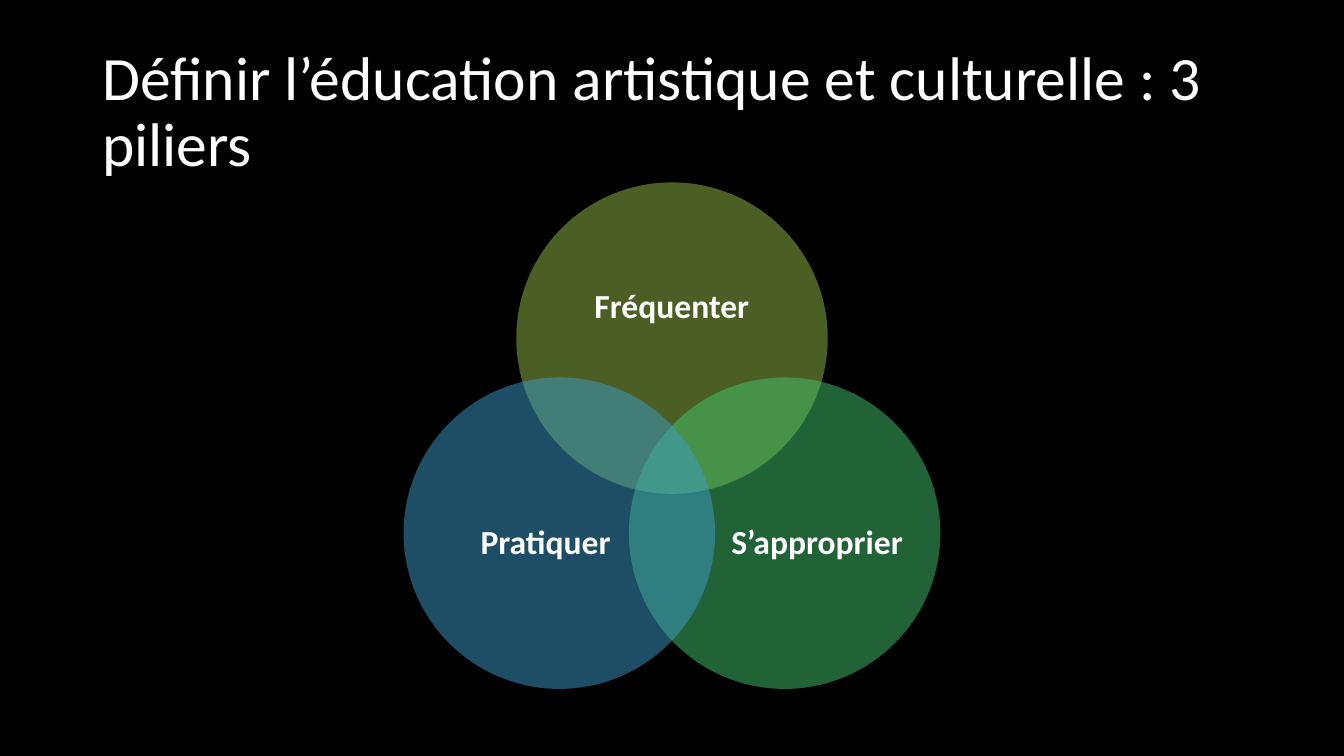
import math

from lxml import etree
from pptx import Presentation
from pptx.dml.color import RGBColor
from pptx.enum.shapes import MSO_SHAPE
from pptx.enum.text import MSO_ANCHOR, PP_ALIGN
from pptx.oxml.ns import qn
from pptx.util import Pt

OVAL = MSO_SHAPE.OVAL
MIDDLE = MSO_ANCHOR.MIDDLE
LEFT, CENTER = PP_ALIGN.LEFT, PP_ALIGN.CENTER

BLACK = RGBColor(0x00, 0x00, 0x00)
WHITE = RGBColor(0xFF, 0xFF, 0xFF)
OLIVE = RGBColor(0x97, 0xBE, 0x49)
GREEN = RGBColor(0x43, 0xC5, 0x6E)
BLUE = RGBColor(0x3D, 0x9C, 0xCC)

FONT = "Calibri"

# Venn geometry in points: circle centres lie on an orbit around the middle
VENN_X, VENN_Y = 480, 334.4
ORBIT = 92.9
DIAMETER = 222.5

# Pillar: word, colour, angle on the orbit, label box, left inset of the label
PILLARS = [
    ("Fréquenter", OLIVE, -90, (398.2, 169.9, 163.4, 100.1), 0),
    ("S’approprier", GREEN, 30, (517, 326.9, 133.2, 122.4), 0),
    ("Pratiquer", BLUE, 150, (309.6, 326.9, 133.2, 122.4), 27),
]


def add_text(shapes, text, box, size, align, insets, bold=False):
    """Add a wrapped, vertically centred white text; insets are l, t, r, b."""
    frame = shapes.add_textbox(*(Pt(v) for v in box)).text_frame
    frame.word_wrap = True
    frame.vertical_anchor = MIDDLE
    (frame.margin_left, frame.margin_top,
     frame.margin_right, frame.margin_bottom) = (Pt(v) for v in insets)
    paragraph = frame.paragraphs[0]
    paragraph.alignment = align
    paragraph.line_spacing = 0.9
    run = paragraph.add_run()
    run.text = text
    run.font.name = FONT
    run.font.size = Pt(size)
    run.font.bold = bold
    run.font.color.rgb = WHITE


def add_circle(shapes, color, angle):
    """Add a half-transparent circle at the given angle of the orbit."""
    left = VENN_X + ORBIT * math.cos(math.radians(angle)) - DIAMETER / 2
    top = VENN_Y + ORBIT * math.sin(math.radians(angle)) - DIAMETER / 2
    circle = shapes.add_shape(OVAL, Pt(left), Pt(top), Pt(DIAMETER), Pt(DIAMETER))
    circle.shadow.inherit = False
    circle.line.fill.background()
    circle.fill.solid()
    circle.fill.fore_color.rgb = color
    fill_color = circle.fill._xPr.find(qn("a:solidFill"))[0]
    etree.SubElement(fill_color, qn("a:alpha"), val="50000")


def main():
    prs = Presentation()
    prs.slide_width, prs.slide_height = Pt(960), Pt(540)
    slide = prs.slides.add_slide(prs.slide_layouts[6])

    # Background
    slide.background.fill.solid()
    slide.background.fill.fore_color.rgb = BLACK

    # Title
    add_text(slide.shapes, "Définir l’éducation artistique et culturelle : 3 piliers",
             (66, 28.8, 828, 104.4), 44, LEFT, (7.2, 3.6, 7.2, 3.6))

    # Three overlapping pillars
    venn = slide.shapes.add_group_shape()
    for word, color, angle, label_box, left_inset in PILLARS:
        add_circle(venn.shapes, color, angle)
        add_text(venn.shapes, word, label_box, 24, CENTER,
                 (left_inset, 0, 0, 0), bold=True)

    prs.save("out.pptx")


if __name__ == "__main__":
    main()
